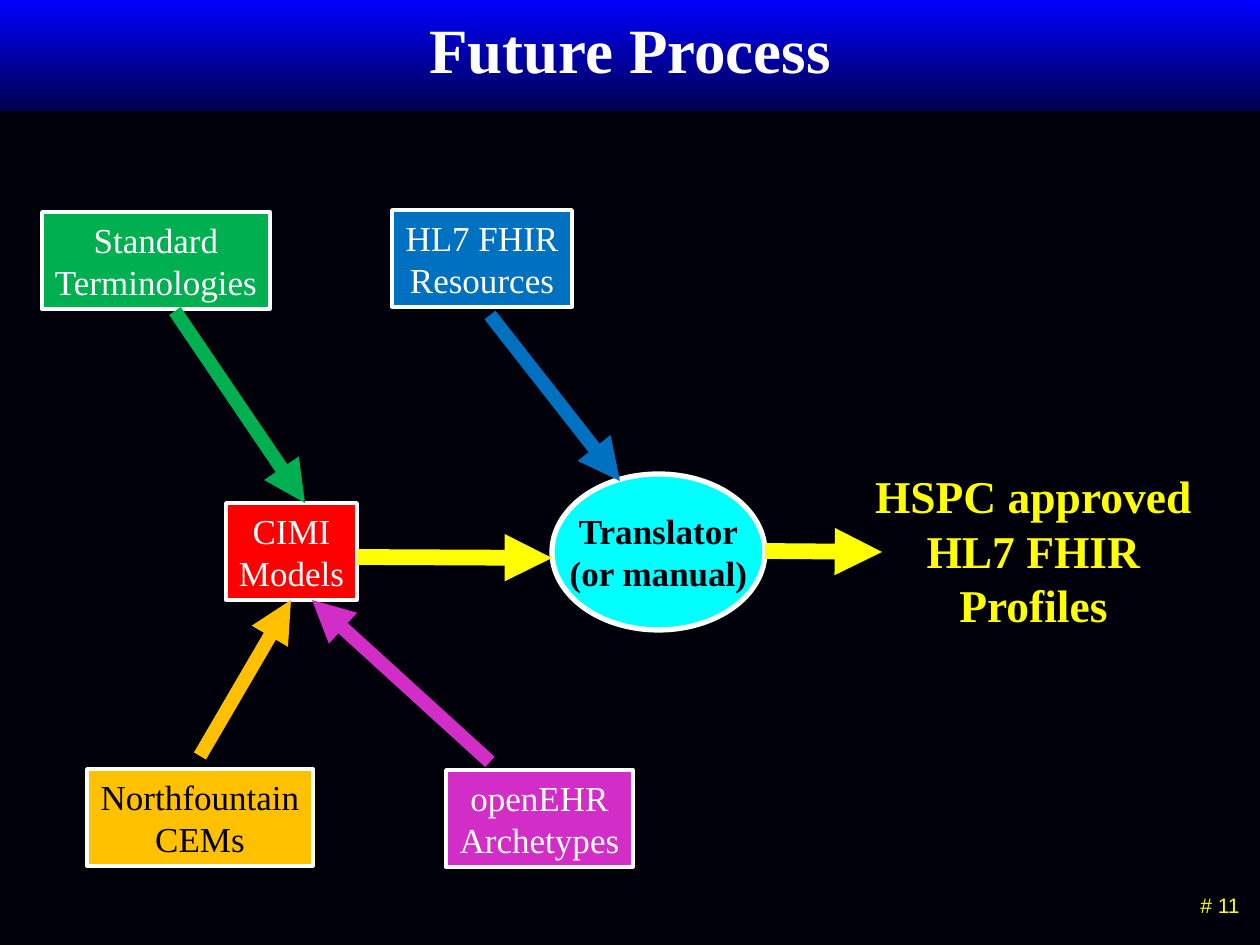
from dataclasses import dataclass

from lxml import etree
from pptx import Presentation
from pptx import util as u
from pptx.dml.color import RGBColor
from pptx.enum import shapes, text
from pptx.oxml import ns

EMU_PER_INCH = 914400
PX_PER_INCH = 126
WIDTH, HEIGHT = 1260, 945


@dataclass(frozen=True)
class Theme:
    dark: str = "00000A"
    light: str = "FFFFFF"
    yellow: str = "FFFF00"
    red: str = "FF0000"
    green: str = "00B050"
    blue: str = "0070C0"
    amber: str = "FFC000"
    magenta: str = "D32DC7"
    cyan: str = "00FFFF"
    band_top: str = "0000FF"
    band_bottom: str = "00004F"
    serif: str = "Times New Roman"
    sans: str = "Arial"
    title_size: int = 36
    result_size: int = 26
    node_size: int = 20
    number_size: int = 12
    line_pitch: float = 1.2


THEME = Theme()


@dataclass(frozen=True)
class Frame:
    left: int
    top: int
    width: int
    height: int


@dataclass(frozen=True)
class Style:
    size: int
    color: str
    bold: bool = False
    font: str = THEME.serif
    align: text.PP_ALIGN = text.PP_ALIGN.CENTER
    anchor: text.MSO_ANCHOR = text.MSO_ANCHOR.TOP


@dataclass(frozen=True)
class Node:
    frame: Frame
    lines: tuple[str, ...]
    fill: str
    style: Style
    kind: shapes.MSO_SHAPE = shapes.MSO_SHAPE.RECTANGLE
    border: int = 2


@dataclass(frozen=True)
class Arrow:
    start: tuple[int, int]
    end: tuple[int, int]
    color: str
    weight: int = 8


@dataclass(frozen=True)
class Label:
    frame: Frame
    lines: tuple[str, ...]
    style: Style


ON_COLOR = Style(THEME.node_size, THEME.light)
ON_AMBER = Style(THEME.node_size, THEME.dark)
ON_CYAN = Style(THEME.node_size, THEME.dark, bold=True, anchor=text.MSO_ANCHOR.MIDDLE)

NODES = (
    Node(Frame(226, 503, 131, 97), ("CIMI", "Models"), THEME.red, ON_COLOR),
    Node(Frame(42, 212, 228, 97), ("Standard", "Terminologies"), THEME.green, ON_COLOR),
    Node(Frame(392, 210, 180, 97), ("HL7 FHIR", "Resources"), THEME.blue, ON_COLOR),
    Node(Frame(87, 769, 226, 97), ("Northfountain", "CEMs"), THEME.amber, ON_AMBER),
    Node(Frame(446, 770, 187, 97), ("openEHR", "Archetypes"), THEME.magenta, ON_COLOR),
    Node(Frame(552, 474, 213, 156), ("Translator", "(or manual)"), THEME.cyan, ON_CYAN,
         shapes.MSO_SHAPE.OVAL, 3),
)

ARROWS = (
    Arrow((175, 311), (305, 503), THEME.green),
    Arrow((490, 315), (620, 481), THEME.blue),
    Arrow((200, 756), (291, 600), THEME.amber),
    Arrow((490, 762), (312, 600), THEME.magenta),
    Arrow((357, 557), (552, 558), THEME.yellow, 9),
    Arrow((765, 551), (882, 552), THEME.yellow, 9),
)

LABELS = (
    Label(Frame(63, 4, 1134, 100), ("Future Process",),
          Style(THEME.title_size, THEME.light, bold=True)),
    Label(Frame(861, 462, 345, 178), ("HSPC approved", "HL7 FHIR", "Profiles"),
          Style(THEME.result_size, THEME.yellow, bold=True)),
    Label(Frame(1121, 886, 131, 43), ("# 11",),
          Style(THEME.number_size, THEME.yellow, font=THEME.sans, align=text.PP_ALIGN.RIGHT)),
)


def px(length: int) -> u.Emu:
    return u.Emu(round(length * EMU_PER_INCH / PX_PER_INCH))


def rgb(color: str) -> RGBColor:
    return RGBColor.from_string(color)


def place(frame: Frame) -> tuple[u.Emu, ...]:
    return px(frame.left), px(frame.top), px(frame.width), px(frame.height)


def write(box, lines: tuple[str, ...], style: Style, wrap: bool = False) -> None:
    body = box.text_frame
    body.word_wrap = wrap
    body.auto_size = text.MSO_AUTO_SIZE.NONE
    body.vertical_anchor = style.anchor
    for index, line in enumerate(lines):
        para = body.add_paragraph() if index else body.paragraphs[0]
        para.alignment = style.align
        para.line_spacing = u.Pt(style.size * THEME.line_pitch)
        span = para.add_run()
        span.text = line
        span.font.name = style.font
        span.font.size = u.Pt(style.size)
        span.font.bold = style.bold
        span.font.color.rgb = rgb(style.color)


def draw_band(page, frame: Frame) -> None:
    band = page.shapes.add_shape(shapes.MSO_SHAPE.RECTANGLE, *place(frame))
    band.shadow.inherit = False
    band.line.fill.background()
    band.fill.gradient()
    band.fill.gradient_angle = 270
    for stop, color in zip(band.fill.gradient_stops, (THEME.band_top, THEME.band_bottom)):
        stop.color.rgb = rgb(color)


def draw_node(page, node: Node) -> None:
    box = page.shapes.add_shape(node.kind, *place(node.frame))
    box.shadow.inherit = False
    box.fill.solid()
    box.fill.fore_color.rgb = rgb(node.fill)
    box.line.color.rgb = rgb(THEME.light)
    box.line.width = u.Pt(node.border)
    write(box, node.lines, node.style)


def draw_arrow(page, arrow: Arrow) -> None:
    ends = [px(value) for value in arrow.start + arrow.end]
    connector = page.shapes.add_connector(shapes.MSO_CONNECTOR.STRAIGHT, *ends)
    connector.line.color.rgb = rgb(arrow.color)
    connector.line.width = u.Pt(arrow.weight)
    outline = connector.line._get_or_add_ln()
    etree.SubElement(outline, ns.qn("a:tailEnd"), type="triangle")
    etree.SubElement(connector._element.spPr, ns.qn("a:effectLst"))


def draw_label(page, label: Label) -> None:
    box = page.shapes.add_textbox(*place(label.frame))
    write(box, label.lines, label.style, wrap=True)


def main() -> None:
    deck = Presentation()
    deck.slide_width, deck.slide_height = px(WIDTH), px(HEIGHT)
    page = deck.slides.add_slide(deck.slide_layouts[6])

    # Background and title band
    page.background.fill.solid()
    page.background.fill.fore_color.rgb = rgb(THEME.dark)
    draw_band(page, Frame(0, 0, WIDTH, 111))

    # Process diagram
    for node in NODES:
        draw_node(page, node)
    for arrow in ARROWS:
        draw_arrow(page, arrow)

    # Title, result and page number
    for label in LABELS:
        draw_label(page, label)

    deck.save("out.pptx")


if __name__ == "__main__":
    main()
